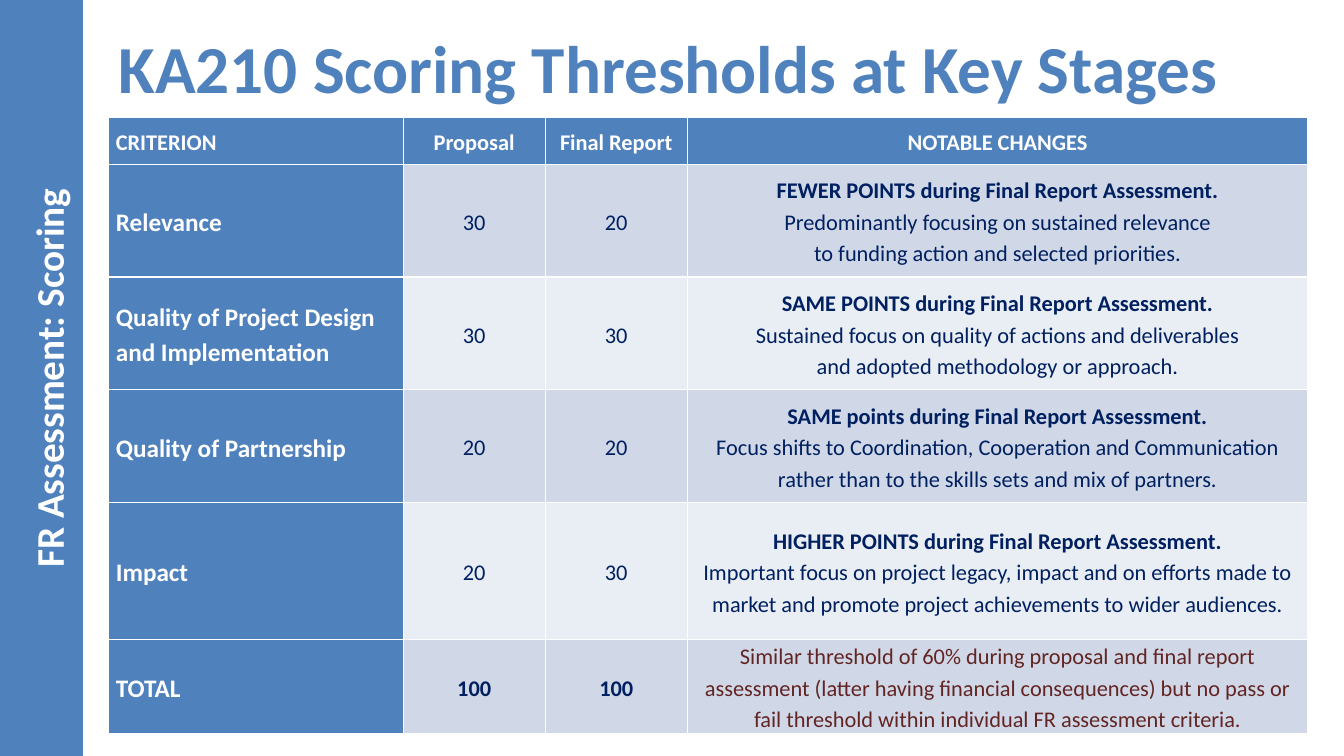
from pptx import Presentation
from pptx.dml.color import RGBColor
from pptx.enum.shapes import MSO_SHAPE
from pptx.enum.text import MSO_ANCHOR, PP_ALIGN
from pptx.util import Cm, Pt

RECTANGLE = MSO_SHAPE.RECTANGLE
MIDDLE = MSO_ANCHOR.MIDDLE
LEFT, CENTER = PP_ALIGN.LEFT, PP_ALIGN.CENTER

FONT = "Calibri"
COLORS = {
    "blue": "4F81BD",
    "white": "FFFFFF",
    "navy": "002060",
    "maroon": "632523",
    "odd_row": "D0D8E8",
    "even_row": "E9EDF4",
}

TITLE = "KA210 Scoring Thresholds at Key Stages"
SECTION = "FR Assessment: Scoring"
HEADER = ("CRITERION", "Proposal", "Final Report", "NOTABLE CHANGES")
# criterion, proposal points, final report points, headline of change, explanation
CRITERIA = [
    ("Relevance", "30", "20", "FEWER POINTS during Final Report Assessment.",
     "Predominantly focusing on sustained relevance\n"
     "to funding action and selected priorities."),
    ("Quality of Project Design\nand Implementation", "30", "30",
     "SAME POINTS during Final Report Assessment.",
     "Sustained focus on quality of actions and deliverables\n"
     "and adopted methodology or approach."),
    ("Quality of Partnership", "20", "20", "SAME points during Final Report Assessment.",
     "Focus shifts to Coordination, Cooperation and Communication "
     "rather than to the skills sets and mix of partners."),
    ("Impact", "20", "30", "HIGHER POINTS during Final Report Assessment.",
     "Important focus on project legacy, impact and on efforts made to "
     "market and promote project achievements to wider audiences."),
]
TOTAL = ("TOTAL", "100", "100",
         "Similar threshold of 60% during proposal and final report assessment "
         "(latter having financial consequences) but no pass or fail threshold "
         "within individual FR assessment criteria.")

SLIDE_WIDTH, SLIDE_HEIGHT = 33.87, 19.05
BAND_WIDTH = 2.09
CONTENT_LEFT, CONTENT_WIDTH = 2.74, 30.2
TITLE_TOP, TITLE_HEIGHT = 0.53, 2.31
TABLE_TOP = 2.95
COLUMN_WIDTHS = (7.42, 3.58, 3.58, 15.64)
ROW_HEIGHTS = (1.19, 2.84, 2.84, 2.84, 3.45, 2.03)


def color(name):
    return RGBColor.from_string(COLORS[name])


def style_paragraph(paragraph, size, color_name, bold=None, align=LEFT):
    paragraph.alignment = align
    font = paragraph.font
    font.name, font.size, font.bold = FONT, Pt(size), bold
    font.color.rgb = color(color_name)


def add_lines(paragraph, text, bold=None):
    """Add text as runs, with a line break at each newline."""
    for index, line in enumerate(text.split("\n")):
        if index:
            paragraph.add_line_break()
        run = paragraph.add_run()
        run.text = line
        run.font.bold = bold


def prepare_cell(cell, fill, size, color_name, bold=None, align=CENTER):
    """Format a cell and return its empty paragraph."""
    cell.fill.solid()
    cell.fill.fore_color.rgb = color(fill)
    cell.vertical_anchor = MIDDLE
    cell.margin_left = cell.margin_right = Cm(0.18)
    cell.margin_top = cell.margin_bottom = 0
    paragraph = cell.text_frame.paragraphs[0]
    style_paragraph(paragraph, size, color_name, bold, align)
    paragraph.line_spacing = 1.15
    paragraph.space_before = paragraph.space_after = Pt(3)
    return paragraph


def add_band(slide):
    """Add the side band, a wide rectangle turned to read upwards."""
    band = slide.shapes.add_shape(
        RECTANGLE, Cm((BAND_WIDTH - SLIDE_HEIGHT) / 2), Cm((SLIDE_HEIGHT - BAND_WIDTH) / 2),
        Cm(SLIDE_HEIGHT), Cm(BAND_WIDTH))
    band.rotation = 270
    band.shadow.inherit = False
    band.fill.solid()
    band.fill.fore_color.rgb = color("blue")
    band.line.fill.background()
    frame = band.text_frame
    frame.vertical_anchor = MIDDLE
    frame.margin_top = Cm(0.47)
    paragraph = frame.paragraphs[0]
    style_paragraph(paragraph, 28, "white", True, CENTER)
    add_lines(paragraph, SECTION)


def add_title(slide):
    box = slide.shapes.add_textbox(
        Cm(CONTENT_LEFT), Cm(TITLE_TOP), Cm(CONTENT_WIDTH), Cm(TITLE_HEIGHT))
    box.text_frame.word_wrap = True
    paragraph = box.text_frame.paragraphs[0]
    style_paragraph(paragraph, 48, "blue", True)
    add_lines(paragraph, TITLE)


def add_scoring_table(slide):
    table = slide.shapes.add_table(
        len(ROW_HEIGHTS), len(COLUMN_WIDTHS), Cm(CONTENT_LEFT), Cm(TABLE_TOP),
        Cm(sum(COLUMN_WIDTHS)), Cm(sum(ROW_HEIGHTS))).table
    table.first_col = True
    for column, width in zip(table.columns, COLUMN_WIDTHS):
        column.width = Cm(width)
    for row, height in zip(table.rows, ROW_HEIGHTS):
        row.height = Cm(height)

    for index, text in enumerate(HEADER):
        align = CENTER if index else LEFT
        add_lines(prepare_cell(table.cell(0, index), "blue", 16, "white", True, align), text)

    for row, (criterion, *points, last) in enumerate(
            [(*entry[:3], entry[3:]) for entry in CRITERIA] + [TOTAL], start=1):
        is_total = row > len(CRITERIA)
        fill = "odd_row" if row % 2 else "even_row"
        add_lines(prepare_cell(table.cell(row, 0), "blue", 18, "white", True, LEFT), criterion)
        for column, score in enumerate(points, start=1):
            add_lines(prepare_cell(table.cell(row, column), fill, 16, "navy", is_total), score)
        changes = table.cell(row, 3)
        if is_total:
            add_lines(prepare_cell(changes, fill, 16, "maroon", False), last)
        else:
            headline, explanation = last
            paragraph = prepare_cell(changes, fill, 16, "navy")
            add_lines(paragraph, headline, True)
            paragraph.add_line_break()
            add_lines(paragraph, explanation, False)


def main():
    presentation = Presentation()
    presentation.slide_width = Cm(SLIDE_WIDTH)
    presentation.slide_height = Cm(SLIDE_HEIGHT)
    slide = presentation.slides.add_slide(presentation.slide_layouts[6])
    add_scoring_table(slide)
    add_band(slide)
    add_title(slide)
    presentation.save("out.pptx")


if __name__ == "__main__":
    main()
